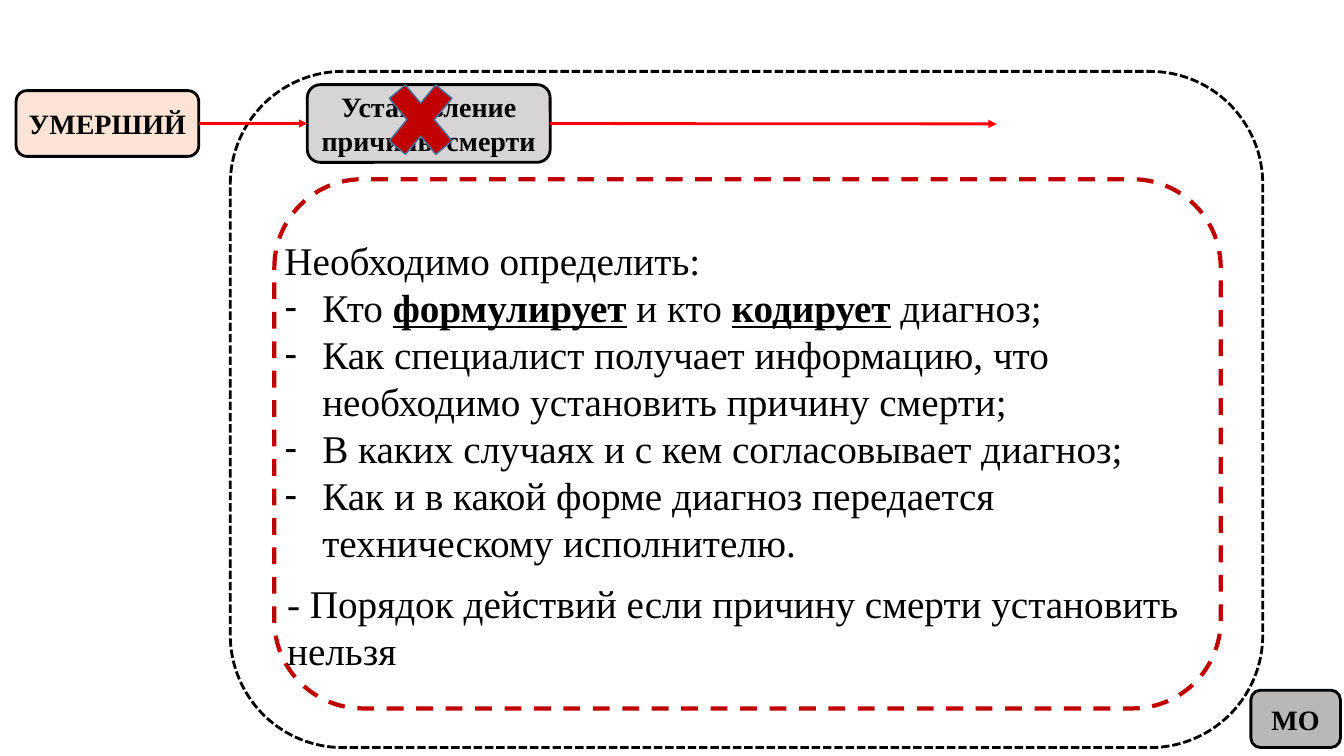
from dataclasses import dataclass

from lxml import etree
from pptx import Presentation
from pptx.dml.color import RGBColor
from pptx.enum.dml import MSO_LINE
from pptx.enum.shapes import MSO_CONNECTOR, MSO_SHAPE
from pptx.enum.text import MSO_ANCHOR, MSO_AUTO_SIZE, PP_ALIGN
from pptx.oxml.ns import qn
from pptx.util import Pt

ROUND = MSO_SHAPE.ROUNDED_RECTANGLE
CROSS = MSO_SHAPE.MATH_MULTIPLY
LINE = MSO_CONNECTOR.STRAIGHT
DASH, DOTS = MSO_LINE.DASH, MSO_LINE.SQUARE_DOT
LEFT, MID = PP_ALIGN.LEFT, PP_ALIGN.CENTER
TOP, CENTER = MSO_ANCHOR.TOP, MSO_ANCHOR.MIDDLE
FIT_NONE = MSO_AUTO_SIZE.NONE


@dataclass(frozen=True)
class Theme:
    font: str = "Times New Roman"
    ink: str = "000000"
    red: str = "C00000"
    arrow: str = "FF0000"
    peach: str = "F8CBAD"
    gray: str = "AFABAB"
    dark: str = "767171"
    edge: str = "43739E"
    label: int = 20
    body: int = 28


THEME = Theme()
TASKS = [
    [("Кто ", False), ("формулирует", True), (" и кто ", False),
     ("кодирует", True), (" диагноз;", False)],
    "Как специалист получает информацию, что необходимо установить причину смерти;",
    "В каких случаях и с кем согласовывает диагноз;",
    "Как и в какой форме диагноз передается техническому исполнителю.",
]


def color(name):
    return RGBColor.from_string(name)


def place(shape, box):
    shape.left, shape.top, shape.width, shape.height = map(Pt, box)


def write(para, text, size=THEME.body, bold=False, align=LEFT, bullet=None):
    para.alignment = align
    para.space_before = para.space_after = Pt(0)
    props = para._p.get_or_add_pPr()
    indent = Pt(27) if bullet else 0
    props.set("marL", str(indent))
    props.set("indent", str(-indent))
    if bullet:
        etree.SubElement(props, qn("a:buFontTx"))
        etree.SubElement(props, qn("a:buChar")).set("char", bullet)
    else:
        etree.SubElement(props, qn("a:buNone"))
    parts = [(text, False)] if isinstance(text, str) else text
    for words, strong in parts:
        run = para.add_run()
        run.text = words
        font = run.font
        font.name, font.size = THEME.font, Pt(size)
        font.bold, font.underline = bold or strong, strong
        font.color.rgb = color(THEME.ink)


def draw(slide, kind, box, line, width, fill=None, alpha=None, dash=None):
    shape = slide.shapes.add_shape(kind, *map(Pt, box))
    shape.shadow.inherit = False
    shape.line.color.rgb = color(line)
    shape.line.width = Pt(width)
    if dash:
        shape.line.dash_style = dash
    if fill:
        shape.fill.solid()
        shape.fill.fore_color.rgb = color(fill)
    else:
        shape.fill.background()
    if alpha:
        tone = shape.fill._xPr.find(qn("a:solidFill"))[0]
        etree.SubElement(tone, qn("a:alpha")).set("val", str(alpha * 1000))
    return shape


def label(slide, box, text, fill):
    shape = draw(slide, ROUND, box, THEME.ink, 2, fill, alpha=50)
    frame = shape.text_frame
    frame.word_wrap = True
    frame.vertical_anchor = CENTER
    frame.margin_left = frame.margin_right = Pt(2)
    frame.margin_top = frame.margin_bottom = Pt(0)
    write(frame.paragraphs[0], text, THEME.label, bold=True, align=MID)
    return shape


def arrow(slide, start, end=None, point=(0, 0)):
    link = slide.shapes.add_connector(LINE, 0, 0, *map(Pt, point))
    link.begin_connect(start, 3)
    if end:
        link.end_connect(end, 1)
    link.line.color.rgb = color(THEME.arrow)
    link.line.width = Pt(2)
    etree.SubElement(link.line._get_or_add_ln(), qn("a:tailEnd")).set("type", "triangle")
    etree.SubElement(link._element.spPr, qn("a:effectLst"))


def flow(slide, box):
    x, y, w, h = box
    dead = label(slide, (x, y + 4.25, 130.5, 47), "УМЕРШИЙ", THEME.peach)
    cause = label(slide, (x + 208, y, 173.5, h), "Установление причины смерти", THEME.gray)
    arrow(slide, dead, cause)
    arrow(slide, cause, point=(x + w, y + 28))
    draw(slide, CROSS, (x + 257, y - 13.5, 64, 77), THEME.edge, 1, THEME.red)


def tasks(slide, body, box):
    x, y, w, h = box
    draw(slide, ROUND, box, THEME.red, 3, dash=DASH)
    place(body, (x, y + 37, w, 245))
    note = slide.shapes.add_textbox(*map(Pt, (x + 2, y + 282, w, 75)))
    for shape in (body, note):
        frame = shape.text_frame
        frame.auto_size = FIT_NONE
        frame.word_wrap = True
        frame.vertical_anchor = TOP
    frame = body.text_frame
    write(frame.paragraphs[0], "Необходимо определить:")
    for task in TASKS:
        write(frame.add_paragraph(), task, bullet="-")
    write(note.text_frame.paragraphs[0],
          "- Порядок действий если причину смерти установить нельзя")


def main():
    deck = Presentation()
    deck.slide_width, deck.slide_height = Pt(960), Pt(540)
    slide = deck.slides.add_slide(deck.slide_layouts[1])
    title, body = slide.placeholders
    title._element.getparent().remove(title._element)
    draw(slide, ROUND, (164.5, 51, 737.5, 483), THEME.ink, 2, dash=DOTS)
    flow(slide, (11.5, 60.5, 700.5, 55.5))
    tasks(slide, body, (196, 128, 676, 378))
    label(slide, (893.5, 493, 64, 41), "МО", THEME.dark)
    deck.save("out.pptx")


if __name__ == "__main__":
    main()
